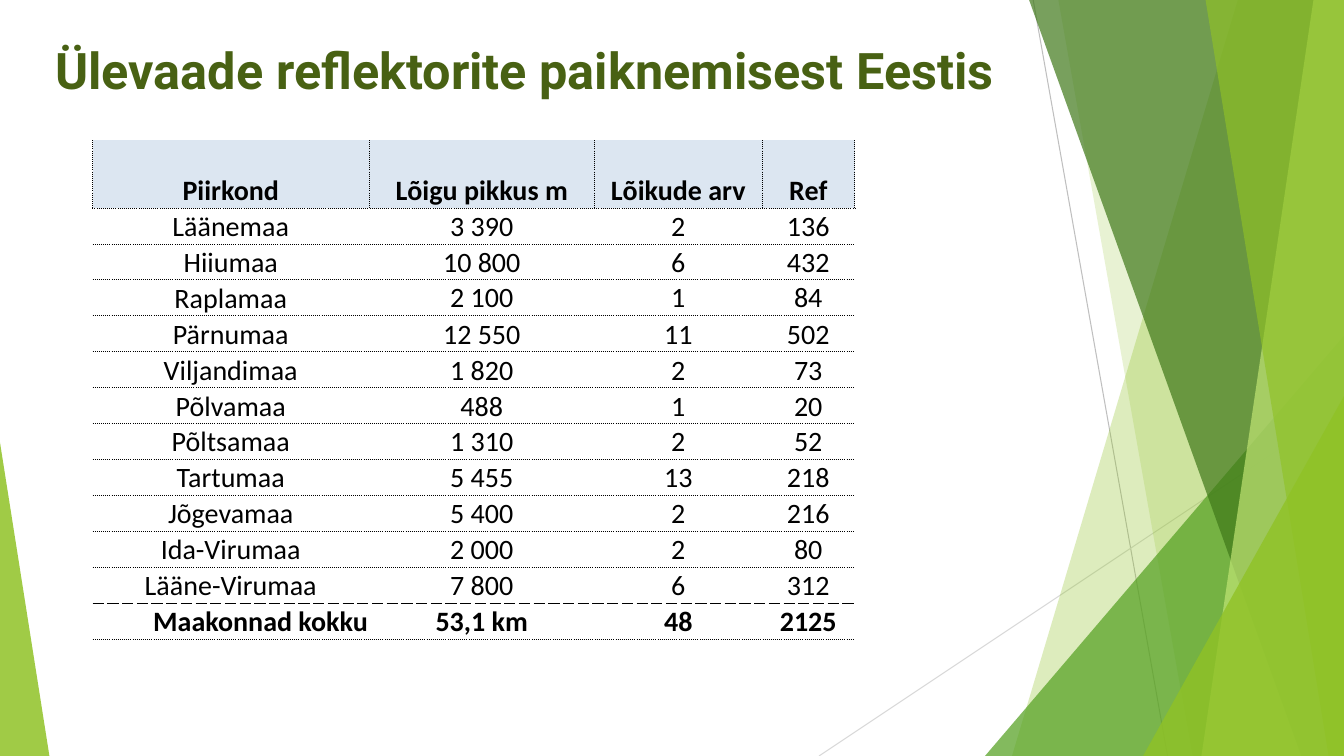
from lxml.etree import SubElement
from pptx import Presentation
from pptx.dml.color import RGBColor
from pptx.enum.shapes import MSO_CONNECTOR, MSO_SHAPE
from pptx.enum.text import MSO_ANCHOR, MSO_AUTO_SIZE, PP_ALIGN
from pptx.oxml.ns import qn
from pptx.util import Pt

WIDTH, HEIGHT = 960, 540
COLORS = {
    "title": "486113", "text": "000000", "header": "DCE6F1",
    "line": "BFBFBF", "pale line": "D9D9D9",
    "lime": "90C226", "green": "54A021", "dark": "3F7819", "light": "C0E474",
}
TITLE = "Ülevaade reflektorite paiknemisest Eestis"
ROWS = [
    ("Piirkond", "Lõigu pikkus m", "Lõikude arv", "Ref"),
    ("Läänemaa", "3 390", "2", "136"),
    ("Hiiumaa", "10 800", "6", "432"),
    ("Raplamaa", "2 100", "1", "84"),
    ("Pärnumaa", "12 550", "11", "502"),
    ("Viljandimaa", "1 820", "2", "73"),
    ("Põlvamaa", "488", "1", "20"),
    ("Põltsamaa", "1 310", "2", "52"),
    ("Tartumaa", "5 455", "13", "218"),
    ("Jõgevamaa", "5 400", "2", "216"),
    ("Ida-Virumaa", "2 000", "2", "80"),
    ("Lääne-Virumaa", "7 800", "6", "312"),
    ("Maakonnad kokku", "53,1 km", "48", "2125"),
]
COLUMN_WIDTHS = (197.3, 161.3, 119.5, 66.2)
HEADER_HEIGHT, ROW_HEIGHT = 48.5, 25.7
TABLE_LEFT, TABLE_TOP = 66.2, 100
NO_GRID_STYLE = "{2D5ABB26-0587-4C30-8999-92F81FD0307C}"
DOTTED, DASHED = (0.5, "dot"), (1, "dash")

# start x, start y, end x, end y, colour
RAYS = [(738, 0, 834, 540, "line"), (960, 290, 585, 540, "pale line")]
# Bands reach the right edge: top left x, bottom left x, colour, opacity %
# Triangles: left, top, width, apex position, colour, opacity %
FACETS = [
    ("band", 884.2, 722.9, "lime", 30),
    ("band", 756, 851.8, "lime", 20),
    ("triangle", 703.6, 239.8, 256.4, 1, "green", 72),
    ("band", 735.1, 929.5, "dark", 70),
    ("band", 938.2, 858.2, "light", 70),
    ("band", 861.1, 949, "lime", 65),
    ("triangle", 816.5, 283, 143.5, 1, "lime", 80),
    ("triangle", 0, 316.1, 35.3, 0, "lime", 85),
]


def color(name):
    return RGBColor.from_string(COLORS[name])


def add_ray(shapes, left, top, right, bottom, color_name):
    ray = shapes.add_connector(
        MSO_CONNECTOR.STRAIGHT, Pt(left), Pt(top), Pt(right), Pt(bottom))
    ray.line.color.rgb = color(color_name)
    ray.line.width = Pt(0.75)
    SubElement(ray.element.spPr, qn("a:effectLst"))


def add_band(shapes, top_left, bottom_left):
    builder = shapes.build_freeform(Pt(top_left), Pt(0))
    corners = [(WIDTH, 0), (WIDTH, HEIGHT), (bottom_left, HEIGHT)]
    builder.add_line_segments([(Pt(x), Pt(y)) for x, y in corners], close=True)
    return builder.convert_to_shape()


def add_triangle(shapes, left, top, width, apex):
    triangle = shapes.add_shape(
        MSO_SHAPE.ISOSCELES_TRIANGLE, Pt(left), Pt(top), Pt(width), Pt(HEIGHT - top))
    triangle.adjustments[0] = apex
    return triangle


def add_facet(shapes, kind, *geometry, color_name, opacity):
    facet = {"band": add_band, "triangle": add_triangle}[kind](shapes, *geometry)
    facet.shadow.inherit = False
    facet.line.fill.background()
    facet.fill.solid()
    facet.fill.fore_color.rgb = color(color_name)
    tint = facet.element.spPr.find(".//" + qn("a:srgbClr"))
    SubElement(tint, qn("a:alpha"), val=str(opacity * 1000))


def add_border(cell, side, width, dash):
    properties = cell._tc.get_or_add_tcPr()
    border = SubElement(properties, qn("a:ln" + side), w=str(Pt(width)))
    fill = SubElement(border, qn("a:solidFill"))
    SubElement(fill, qn("a:srgbClr"), val=COLORS["text"])
    SubElement(border, qn("a:prstDash"), val=dash)


def format_cell(cell, row, column):
    last = len(ROWS) - 1
    if row == 0:
        borders = {"L": DOTTED, "R": DOTTED, "B": DOTTED}
    else:
        borders = {"T": DASHED if row == last else DOTTED,
                   "B": DASHED if row == last - 1 else DOTTED}
    for side, (width, dash) in borders.items():
        add_border(cell, side, width, dash)
    if row == 0:
        cell.fill.solid()
        cell.fill.fore_color.rgb = color("header")
    else:
        cell.fill.background()
    cell.margin_left = cell.margin_right = cell.margin_top = Pt(0.7)
    cell.margin_bottom = 0
    centred = ROWS[row][0] == "Raplamaa" and column > 0
    cell.vertical_anchor = MSO_ANCHOR.MIDDLE if centred else MSO_ANCHOR.BOTTOM
    paragraph = cell.text_frame.paragraphs[0]
    total_label = row == last and column == 0
    paragraph.alignment = PP_ALIGN.RIGHT if total_label else PP_ALIGN.CENTER
    paragraph.font.name = "Calibri"
    paragraph.font.size = Pt(20)
    paragraph.font.bold = row in (0, last)
    paragraph.font.color.rgb = color("text")


def add_region_table(shapes):
    frame = shapes.add_table(
        len(ROWS), len(COLUMN_WIDTHS), Pt(TABLE_LEFT), Pt(TABLE_TOP),
        Pt(sum(COLUMN_WIDTHS)), Pt(HEADER_HEIGHT + ROW_HEIGHT * (len(ROWS) - 1)))
    table = frame.table
    table.horz_banding = False
    frame.element.find(".//" + qn("a:tableStyleId")).text = NO_GRID_STYLE
    for column, width in zip(table.columns, COLUMN_WIDTHS):
        column.width = Pt(width)
    for row_index, values in enumerate(ROWS):
        table.rows[row_index].height = Pt(ROW_HEIGHT if row_index else HEADER_HEIGHT)
        for column_index, value in enumerate(values):
            cell = table.cell(row_index, column_index)
            cell.text = value
            format_cell(cell, row_index, column_index)


def format_title(title):
    title.left, title.top, title.width, title.height = Pt(32.4), Pt(20.9), Pt(729.4), Pt(57.6)
    title.text_frame.text = TITLE
    title.text_frame.auto_size = MSO_AUTO_SIZE.NONE
    title.text_frame.vertical_anchor = MSO_ANCHOR.MIDDLE
    paragraph = title.text_frame.paragraphs[0]
    paragraph.alignment = PP_ALIGN.LEFT
    paragraph.font.name = "Roboto"
    paragraph.font.size = Pt(36)
    paragraph.font.bold = True
    paragraph.font.color.rgb = color("title")


def main():
    presentation = Presentation()
    presentation.slide_width, presentation.slide_height = Pt(WIDTH), Pt(HEIGHT)
    slide = presentation.slides.add_slide(presentation.slide_layouts[5])
    for ray in RAYS:
        add_ray(slide.shapes, *ray)
    for kind, *geometry, color_name, opacity in FACETS:
        add_facet(slide.shapes, kind, *geometry, color_name=color_name, opacity=opacity)
    title = slide.shapes.title
    format_title(title)
    title.element.getparent().append(title.element)  # bring in front of the facets
    add_region_table(slide.shapes)
    presentation.save("out.pptx")


if __name__ == "__main__":
    main()
